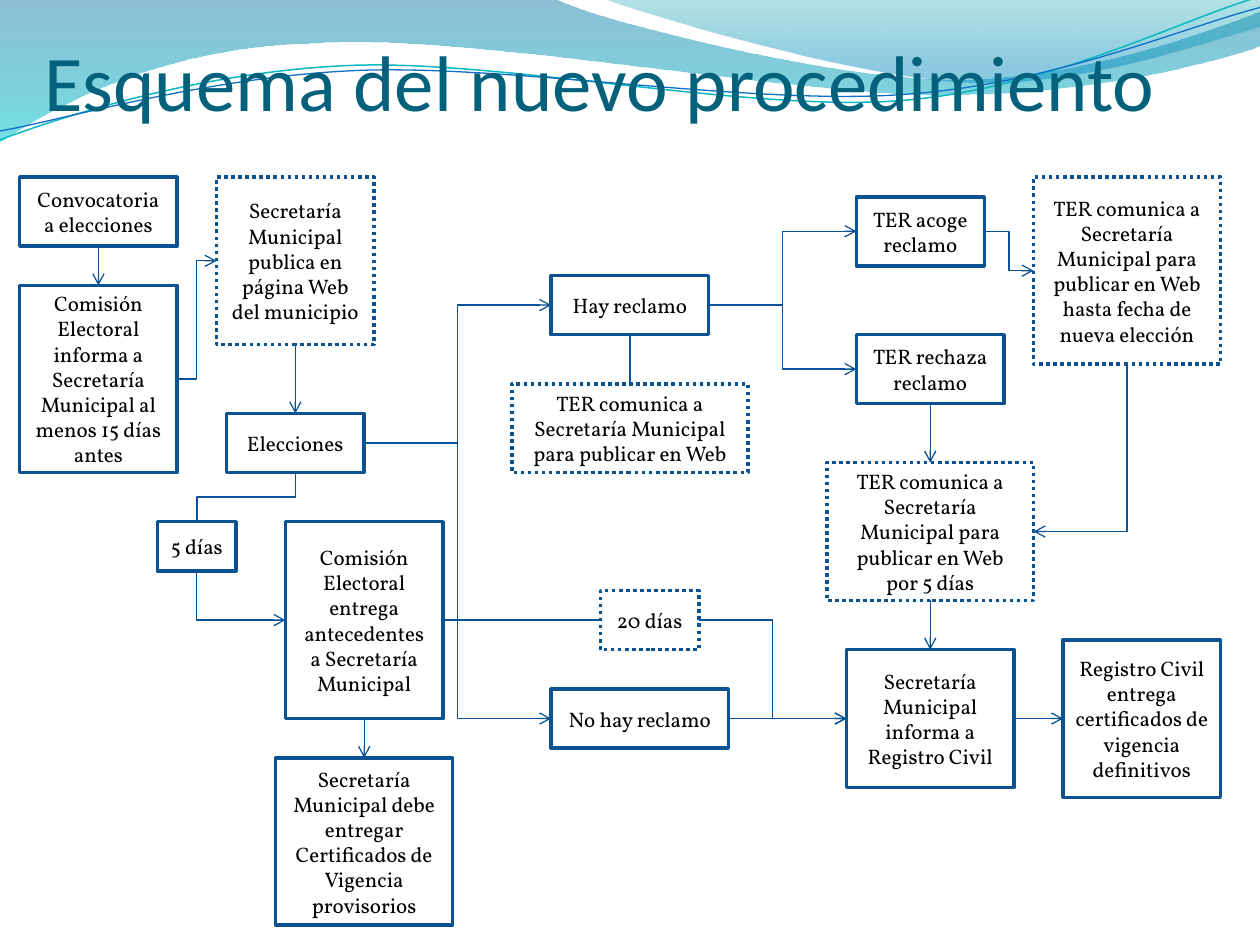
from dataclasses import dataclass
from math import cos, radians, sin

from lxml.etree import SubElement
from pptx import Presentation
from pptx.dml.color import RGBColor
from pptx.enum.dml import MSO_LINE
from pptx.enum.shapes import MSO_CONNECTOR, MSO_SHAPE
from pptx.enum.text import MSO_ANCHOR, PP_ALIGN
from pptx.oxml.ns import qn
from pptx.util import Cm, Pt

GRID = 25.4 / 128  # the slide is 128 by 96 grid steps, in cm
INCH = 2.54        # the header curves are given in inches
TILT = 2.7         # the header strands lean to the left, in degrees
TOP, LEFT, BOTTOM, RIGHT = range(4)  # connection sites of a rectangle


@dataclass(frozen=True)
class Theme:
    title_font: str = "Calibri"
    body_font: str = "Vollkorn"
    title_size: float = 45
    body_size: float = 12
    title_color: str = "04617B"
    body_color: str = "000000"
    border: str = "0B5292"
    arrow: str = "095295"
    border_width: float = 2
    arrow_width: float = 0.75
    # Gradient stops: position, colour, opacity in percent
    left_wave: tuple = ((0, "0074A1", 45), (1, "00C6CF", 55))
    right_wave: tuple = ((0, "00A1A9", 30), (0.8, "008BBF", 45))
    teal_curve: tuple = ("0AB8BF", 0.85)
    blue_curve: tuple = ("0F6FC6", 0.75)


def write(shape, text, *, font, size, color, align=PP_ALIGN.LEFT):
    frame = shape.text_frame
    frame.word_wrap = True
    frame.vertical_anchor = MSO_ANCHOR.MIDDLE
    para = frame.paragraphs[0]
    para.alignment = align
    span = para.add_run()
    span.text = text
    span.font.name = font
    span.font.size = Pt(size)
    span.font.color.rgb = RGBColor.from_string(color)


def turn(point, center, angle):
    x, y = point[0] - center[0], point[1] - center[1]
    c, s = cos(radians(angle)), sin(radians(angle))
    return center[0] + x * c - y * s, center[1] + x * s + y * c


def site_point(box, site):
    x = {LEFT: box.left, RIGHT: box.left + box.width}.get(site, box.left + box.width // 2)
    y = {TOP: box.top, BOTTOM: box.top + box.height}.get(site, box.top + box.height // 2)
    return x, y


class Painter:
    def __init__(self, slide, theme):
        self.slide = slide
        self.theme = theme

    def outline(self, shape, color, width):
        shape.line.color.rgb = RGBColor.from_string(color)
        shape.line.width = Pt(width)

    def curve(self, segments, closed):
        """A segment has one point (line) or two handles and an end (curve)."""
        segments = [[(Cm(INCH * x), Cm(INCH * y)) for x, y in segment] for segment in segments]
        ends = [segment[-1] for segment in segments]
        builder = self.slide.shapes.build_freeform(*ends[0], scale=1.0)
        builder.add_line_segments(ends[1:], close=closed)
        shape = builder.convert_to_shape()
        shape.shadow.inherit = False
        for side, segment in zip(list(shape._element.iter(qn("a:lnTo"))), segments[1:]):
            if len(segment) == 3:
                bend = side.makeelement(qn("a:cubicBezTo"))
                for x, y in segment:
                    point = SubElement(bend, qn("a:pt"))
                    point.set("x", str(x - shape.left))
                    point.set("y", str(y - shape.top))
                side.getparent().replace(side, bend)
        return shape

    def wave(self, segments, stops):
        shape = self.curve(segments, closed=True)
        shape.line.fill.background()
        shape.fill.gradient()
        shape.fill.gradient_angle = 270
        for stop, (position, color, opacity) in zip(shape.fill.gradient_stops, stops):
            stop.position = position
            stop.color.rgb = RGBColor.from_string(color)
        for tag, (position, color, opacity) in zip(shape._element.iter(qn("a:srgbClr")), stops):
            SubElement(tag, qn("a:alpha")).set("val", str(opacity * 1000))

    def strand(self, segments, center, style):
        level = [[turn(point, center, TILT) for point in segment] for segment in segments]
        shape = self.curve(level, closed=False)
        shape.rotation = 360 - TILT
        shape.fill.background()
        self.outline(shape, *style)

    def title(self, text):
        box = self.slide.shapes.add_textbox(Cm(0.89), Cm(0.25), Cm(22.86), Cm(2.59))
        frame = box.text_frame
        frame.margin_left = frame.margin_right = frame.margin_bottom = 0
        write(box, text, font=self.theme.title_font, size=self.theme.title_size,
              color=self.theme.title_color)

    def box(self, text, area, dotted=False):
        box = self.slide.shapes.add_shape(MSO_SHAPE.RECTANGLE, *(Cm(GRID * n) for n in area))
        box.shadow.inherit = False
        box.fill.background()
        self.outline(box, self.theme.border, self.theme.border_width)
        if dotted:
            box.line.dash_style = MSO_LINE.ROUND_DOT
        write(box, text, font=self.theme.body_font, size=self.theme.body_size,
              color=self.theme.body_color, align=PP_ALIGN.CENTER)
        return box

    def link(self, start, start_site, end, end_site, arrow=True):
        (x1, y1), (x2, y2) = site_point(start, start_site), site_point(end, end_site)
        straight = min(abs(x2 - x1), abs(y2 - y1)) < Cm(0.02)
        kind = MSO_CONNECTOR.STRAIGHT if straight else MSO_CONNECTOR.ELBOW
        line = self.slide.shapes.add_connector(kind, x1, y1, x2, y2)
        line.begin_connect(start, start_site)
        line.end_connect(end, end_site)
        if not straight and start_site == BOTTOM:
            self.turn_down(line, x2 - x1, y2 - y1, corner=end_site in (LEFT, RIGHT))
        self.outline(line, self.theme.arrow, self.theme.arrow_width)
        properties = line._element.spPr
        if arrow:
            SubElement(properties.find(qn("a:ln")), qn("a:tailEnd")).set("type", "arrow")
        SubElement(properties, qn("a:effectLst"))

    def turn_down(self, line, across, down, corner):
        """Rotate an elbow by a quarter turn so that it leaves its box downwards."""
        middle_x, middle_y = line.left + line.width // 2, line.top + line.height // 2
        line.width, line.height = down, abs(across)
        line.left, line.top = middle_x - line.width // 2, middle_y - line.height // 2
        frame = line._element.spPr.find(qn("a:xfrm"))
        frame.set("rot", str(90 * 60000))
        frame.set("flipH", "0")
        frame.set("flipV", "1" if across > 0 else "0")
        if corner:
            line._element.spPr.find(qn("a:prstGeom")).set("prst", "bentConnector2")


def main():
    deck = Presentation()
    deck.slide_width, deck.slide_height = Cm(25.4), Cm(19.05)
    theme = Theme()
    painter = Painter(deck.slides.add_slide(deck.slide_layouts[6]), theme)

    # Header waves
    painter.wave([[(0, 0)], [(4.4, -0.01)],
                  [(4.76, 0.17), (6.64, 0.63), (7.58, 0.63)],
                  [(8.53, 0.63), (9.58, 0.26), (10, 0.09)], [(10.01, 0.36)],
                  [(9.83, 0.44), (8.7, 0.76), (7.46, 0.75)],
                  [(6.22, 0.75), (3.82, 0.28), (2.57, 0.34)],
                  [(1.29, 0.36), (0.46, 0.83), (-0.01, 1.13)]], theme.left_wave)
    painter.wave([[(4.79, -0.01)], [(5.09, 0.11), (6.82, 0.62), (7.69, 0.65)],
                  [(8.56, 0.69), (9.61, 0.32), (10, 0.21)], [(10, 0)]], theme.right_wave)
    painter.strand([[(0, 1.11)], [(0.48, 0.93), (1.58, 0.57), (2.77, 0.52)],
                    [(3.95, 0.47), (5.93, 0.89), (7.13, 0.8)],
                    [(8.33, 0.71), (9.38, 0.15), (9.98, -0.02)]], (4.99, 0.57), theme.teal_curve)
    painter.strand([[(0, 1.04)], [(0.47, 0.96), (1.64, 0.61), (2.83, 0.56)],
                    [(4.03, 0.51), (5.97, 0.84), (7.17, 0.75)],
                    [(8.36, 0.67), (9.41, 0.21), (10, 0.06)]], (5, 0.59), theme.blue_curve)
    painter.title("Esquema del nuevo procedimiento")

    # Steps: left, top, width, height in grid steps
    box = painter.box
    registry = box("Secretaría Municipal informa a Registro Civil", (86, 66, 17, 14))
    final = box("Registro Civil entrega certificados de vigencia definitivos", (108, 65, 16, 16))
    call = box("Convocatoria a elecciones", (2, 18, 16, 7))
    rejected = box("TER rechaza reclamo", (87, 34, 15, 7))
    accepted = box("TER acoge reclamo", (87, 20, 13, 7))
    no_claim = box("No hay reclamo", (56, 70, 18, 6))
    notice = box("Comisión Electoral informa a Secretaría Municipal al menos 15 días antes",
                 (2, 29, 16, 19))
    election = box("Elecciones", (23, 42, 14, 6))
    claim = box("Hay reclamo", (56, 28, 16, 6))
    provisional = box("Secretaría Municipal debe entregar Certificados de Vigencia provisorios",
                      (28, 77, 18, 17))
    records = box("Comisión Electoral entrega antecedentes a Secretaría Municipal",
                  (29, 53, 16, 20))
    five_days = box("5 días", (16, 53, 8, 5))
    # Publication steps and waiting period
    twenty_days = box("20 días", (61, 60, 10, 6), dotted=True)
    message = "TER comunica a Secretaría Municipal para publicar en Web"
    claim_post = box(message, (52, 39, 24, 9), dotted=True)
    call_post = box("Secretaría Municipal publica en página Web del municipio",
                    (22, 18, 16, 17), dotted=True)
    accepted_post = box(message + " hasta fecha de nueva elección", (105, 18, 19, 19), dotted=True)
    rejected_post = box(message + " por 5 días", (84, 47, 21, 14), dotted=True)

    # Links in reading order; the last value tells whether there is an arrowhead
    for ends in (
        (call, BOTTOM, notice, TOP),
        (call_post, BOTTOM, election, TOP),
        (five_days, BOTTOM, records, LEFT),
        (notice, RIGHT, call_post, LEFT),
        (election, BOTTOM, five_days, TOP, False),
        (records, BOTTOM, provisional, TOP),
        (election, RIGHT, claim, LEFT),
        (election, RIGHT, no_claim, LEFT),
        (claim, BOTTOM, claim_post, TOP, False),
        (claim, RIGHT, accepted, LEFT),
        (claim, RIGHT, rejected, LEFT),
        (rejected, BOTTOM, rejected_post, TOP),
        (rejected_post, BOTTOM, registry, TOP),
        (no_claim, RIGHT, registry, LEFT),
        (accepted, RIGHT, accepted_post, LEFT),
        (registry, RIGHT, final, LEFT),
        (records, RIGHT, twenty_days, LEFT, False),
        (twenty_days, RIGHT, registry, LEFT),
        (accepted_post, BOTTOM, rejected_post, RIGHT),
    ):
        painter.link(*ends)

    deck.save("out.pptx")


if __name__ == "__main__":
    main()
